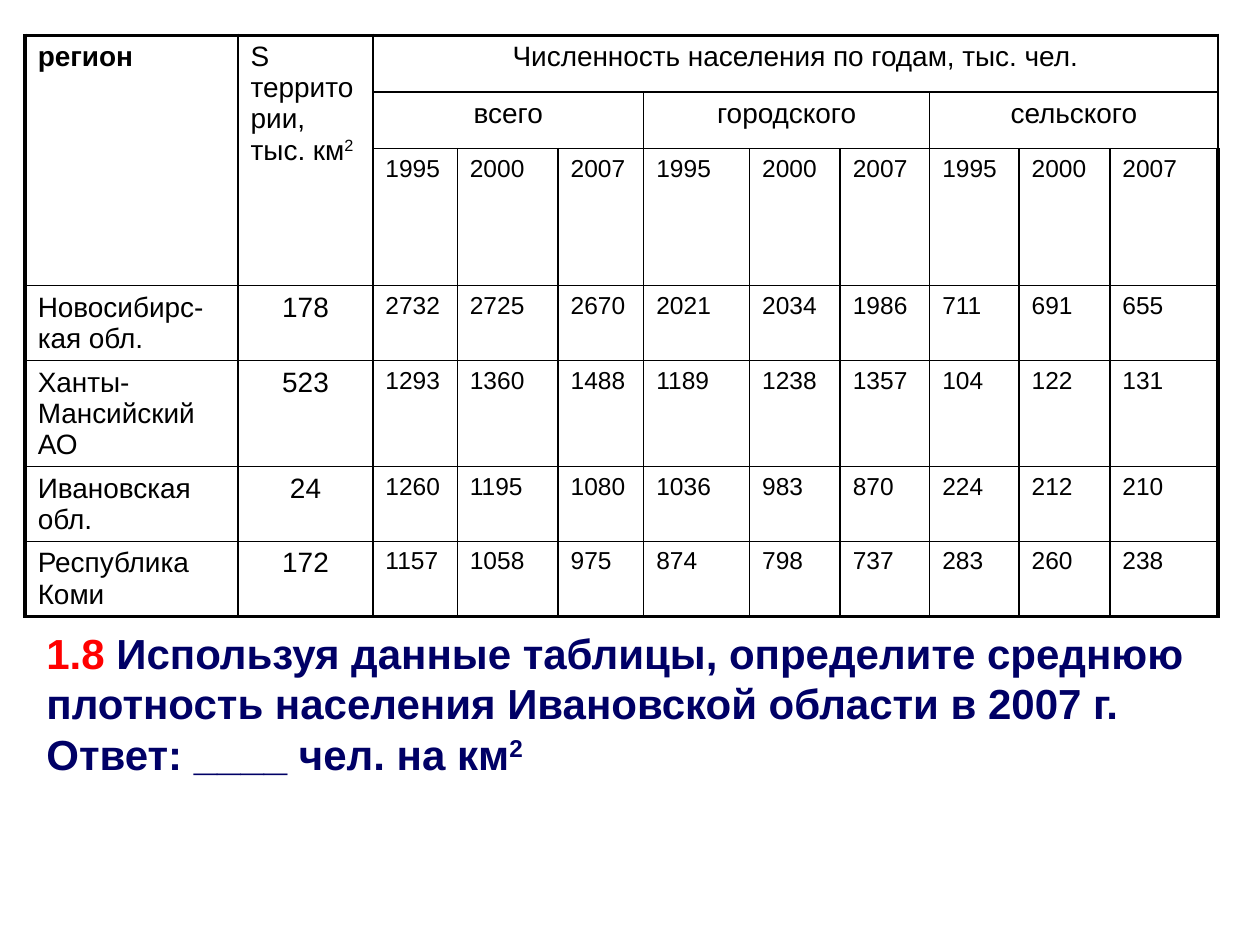
from pptx import Presentation
from pptx.dml.color import RGBColor
from pptx.enum.text import MSO_AUTO_SIZE, PP_ALIGN as Align
from pptx.oxml.ns import qn
from pptx.util import Inches, Pt
from lxml.etree import SubElement

BLACK = RGBColor(0x00, 0x00, 0x00)
RED = RGBColor(0xFF, 0x00, 0x00)
NAVY = RGBColor(0x00, 0x00, 0x66)

COLUMN_WIDTHS = [1.69, 1.07, 0.67, 0.8, 0.68, 0.84, 0.72, 0.71, 0.71, 0.72, 0.86]
ROW_HEIGHT = 0.45
OUTER_LINE, INNER_LINE = Pt(2.25), Pt(1)

LABEL = dict(name="Arial", size=Pt(16), bold=False)
BOLD_LABEL = dict(LABEL, bold=True)
NUMBER = dict(LABEL, size=Pt(14))
QUESTION = dict(name="Arial", size=Pt(24), bold=True)

POPULATION_GROUPS = ["всего", "городского", "сельского"]
YEARS = ["1995", "2000", "2007"]
REGIONS = [
    ("Новосибирс-кая обл.", 178, [2732, 2725, 2670, 2021, 2034, 1986, 711, 691, 655]),
    ("Ханты-Мансийский АО", 523, [1293, 1360, 1488, 1189, 1238, 1357, 104, 122, 131]),
    ("Ивановская обл.", 24, [1260, 1195, 1080, 1036, 983, 870, 224, 212, 210]),
    ("Республика Коми", 172, [1157, 1058, 975, 874, 798, 737, 283, 260, 238]),
]


def add_span(para, text, color, font_format, raised=False):
    span = para.add_run()
    span.text = text
    for name, value in font_format.items():
        setattr(span.font, name, value)
    span.font.color.rgb = color
    if raised:
        span.font._element.set("baseline", "30000")


def fill_cell(cell, text, font_format, align=Align.LEFT, power=None):
    para = cell.text_frame.paragraphs[0]
    para.alignment = align
    add_span(para, str(text), BLACK, font_format)
    if power:
        add_span(para, power, BLACK, font_format, raised=True)


def add_border(cell, side, width):
    line = SubElement(cell._tc.get_or_add_tcPr(), qn(f"a:ln{side}"), w=str(width))
    fill = SubElement(line, qn("a:solidFill"))
    SubElement(fill, qn("a:srgbClr"), val=str(BLACK))


def style_grid(table):
    """Draw a heavy frame round the table and thin lines inside it."""
    last_row, last_column = len(table.rows) - 1, len(table.columns) - 1
    for r in range(last_row + 1):
        for c in range(last_column + 1):
            cell = table.cell(r, c)
            on_frame = {"L": c == 0, "R": c == last_column,
                        "T": r == 0, "B": r == last_row}
            for side, outer in on_frame.items():
                add_border(cell, side, OUTER_LINE if outer else INNER_LINE)
            cell.fill.background()


def fill_header(table):
    table.cell(0, 0).merge(table.cell(2, 0))
    table.cell(0, 1).merge(table.cell(2, 1))
    table.cell(0, 2).merge(table.cell(0, 10))
    fill_cell(table.cell(0, 0), "регион", BOLD_LABEL)
    fill_cell(table.cell(0, 1), "S территории, тыс. км", LABEL, power="2")
    fill_cell(table.cell(0, 2), "Численность населения по годам, тыс. чел.",
              LABEL, Align.CENTER)
    for index, group in enumerate(POPULATION_GROUPS):
        first = 2 + index * len(YEARS)
        table.cell(1, first).merge(table.cell(1, first + len(YEARS) - 1))
        fill_cell(table.cell(1, first), group, LABEL, Align.CENTER)
        for c, year in enumerate(YEARS, first):
            fill_cell(table.cell(2, c), year, NUMBER)


def add_population_table(page, left, top, width, height):
    table = page.shapes.add_table(3 + len(REGIONS), len(COLUMN_WIDTHS),
                                  left, top, width, height).table
    table.first_row = table.horz_banding = False
    for column, column_width in zip(table.columns, COLUMN_WIDTHS):
        column.width = Inches(column_width)
    for row in table.rows:
        row.height = Inches(ROW_HEIGHT)
    fill_header(table)
    for r, (region, area, counts) in enumerate(REGIONS, 3):
        fill_cell(table.cell(r, 0), region, LABEL)
        fill_cell(table.cell(r, 1), area, LABEL, Align.CENTER)
        for c, count in enumerate(counts, 2):
            fill_cell(table.cell(r, c), count, NUMBER)
    style_grid(table)


def add_question(page, left, top, width, height):
    frame = page.shapes.add_textbox(left, top, width, height).text_frame
    frame.word_wrap = True
    frame.auto_size = MSO_AUTO_SIZE.SHAPE_TO_FIT_TEXT
    task = frame.paragraphs[0]
    add_span(task, "1.8", RED, QUESTION)
    add_span(task, " Используя данные таблицы, определите среднюю плотность "
             "населения Ивановской области в 2007 г.", NAVY, QUESTION)
    answer = frame.add_paragraph()
    add_span(answer, "Ответ: ____ чел. на км", NAVY, QUESTION)
    add_span(answer, "2", NAVY, QUESTION, raised=True)


def main():
    deck = Presentation()
    deck.slide_width, deck.slide_height = Inches(10), Inches(7.5)
    page = deck.slides.add_slide(deck.slide_layouts[6])
    add_population_table(page, Inches(0.2), Inches(0.28), Inches(9.45), Inches(4.15))
    add_question(page, Inches(0.27), Inches(4.93), Inches(9.29), Inches(1.3))
    deck.save("out.pptx")


if __name__ == "__main__":
    main()
